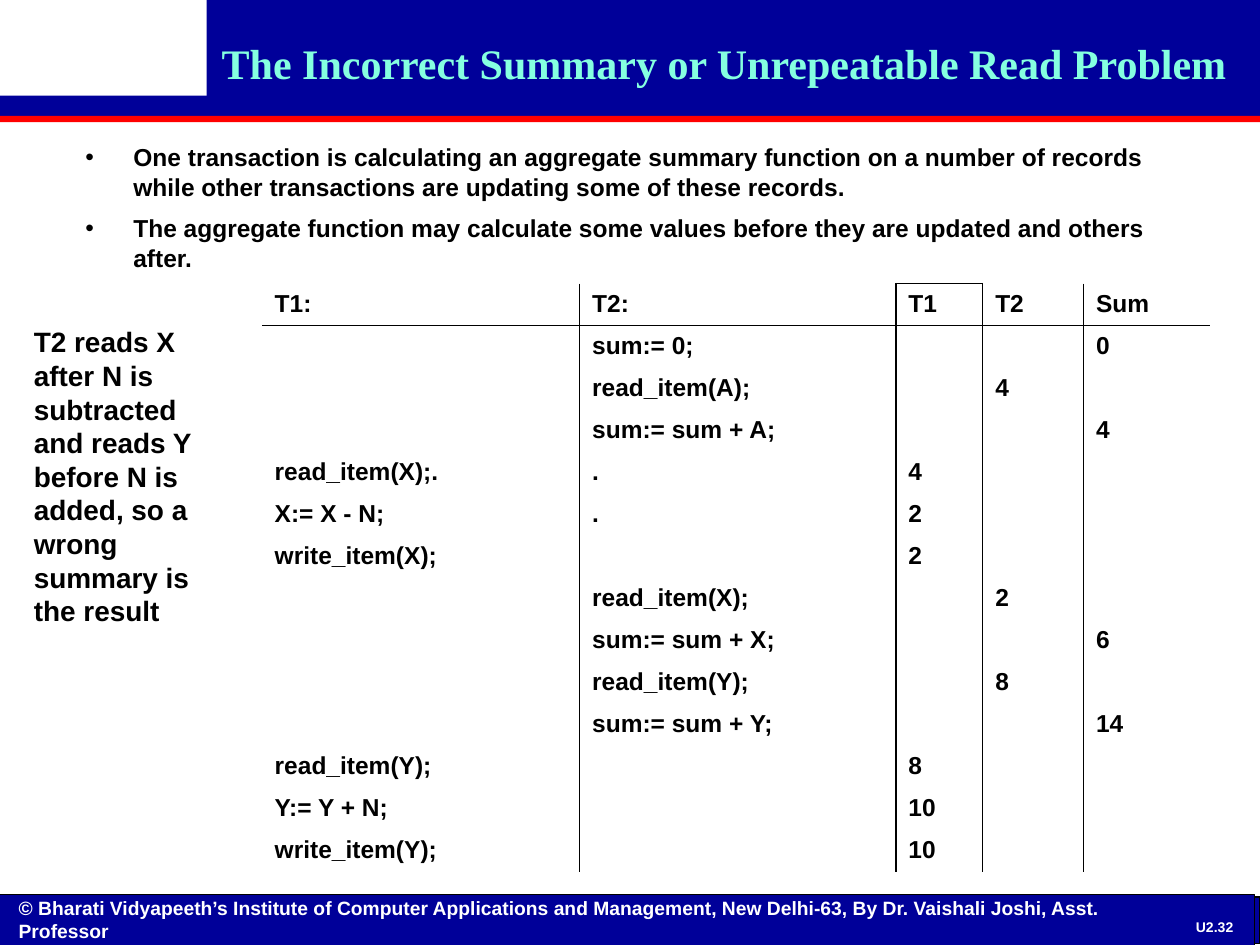
import lxml.etree
import pptx
import pptx.dml.color
import pptx.enum.shapes
import pptx.enum.text
import pptx.oxml.ns
import pptx.util

Inches = pptx.util.Inches
Pt = pptx.util.Pt
RGBColor = pptx.dml.color.RGBColor
Align = pptx.enum.text.PP_ALIGN
Anchor = pptx.enum.text.MSO_ANCHOR
qn = pptx.oxml.ns.qn

NAVY = RGBColor(0x00, 0x00, 0x99)
RED = RGBColor(0xFF, 0x00, 0x00)
AQUA = RGBColor(0x85, 0xFF, 0xE0)
WHITE = RGBColor(0xFF, 0xFF, 0xFF)
BLACK = RGBColor(0x00, 0x00, 0x00)

TITLE = "The Incorrect Summary or Unrepeatable Read Problem"
BULLETS = [
    "One transaction is calculating an aggregate summary function on a number of records "
    "while other transactions are updating some of these records.",
    "The aggregate function may calculate some values before they are updated and others after.",
]
NOTE = ("T2 reads X after N is subtracted and reads Y before N is added, "
        "so a wrong summary is the result")
COPYRIGHT = ("© Bharati Vidyapeeth’s Institute of Computer Applications and Management, "
             "New Delhi-63, By Dr. Vaishali Joshi, Asst. Professor")
COLUMN_WIDTHS = [2.52, 2.51, 0.69, 0.8, 1]
SCHEDULE = [
    ["T1:", "T2:", "T1", "T2", "Sum"],
    ["", "sum:= 0;", "", "", "0"],
    ["", "read_item(A);", "", "4", ""],
    ["", "sum:= sum + A;", "", "", "4"],
    ["read_item(X);.", ".", "4", "", ""],
    ["X:= X - N;", ".", "2", "", ""],
    ["write_item(X);", "", "2", "", ""],
    ["", "read_item(X);", "", "2", ""],
    ["", "sum:= sum + X;", "", "", "6"],
    ["", "read_item(Y);", "", "8", ""],
    ["", "sum:= sum + Y;", "", "", "14"],
    ["read_item(Y);", "", "8", "", ""],
    ["Y:= Y + N;", "", "10", "", ""],
    ["write_item(Y);", "", "10", "", ""],
]


def format_font(font, size, color=BLACK, name="Arial"):
    """Apply the bold face used throughout the slide."""
    for attribute, value in {"name": name, "size": Pt(size), "bold": True}.items():
        setattr(font, attribute, value)
    font.color.rgb = color


def add_band(slide, left, top, width, height, color, outlined=False):
    """Add a filled band, with a thin black outline if asked."""
    shape = slide.shapes.add_shape(
        pptx.enum.shapes.MSO_SHAPE.RECTANGLE,
        Inches(left), Inches(top), Inches(width), Inches(height))
    shape.shadow.inherit = False
    shape.fill.solid()
    shape.fill.fore_color.rgb = color
    if outlined:
        shape.line.color.rgb = BLACK
        shape.line.width = Pt(0.75)
    else:
        shape.line.fill.background()


def add_text(slide, left, top, width, height, text, size, color=BLACK, **frame_format):
    """Add a wrapped single-paragraph text box and return its text frame."""
    box = slide.shapes.add_textbox(Inches(left), Inches(top), Inches(width), Inches(height))
    frame = box.text_frame
    for attribute, value in {"word_wrap": True, **frame_format}.items():
        setattr(frame, attribute, value)
    frame.text = text
    format_font(frame.paragraphs[0].font, size, color)
    return frame


def add_header(slide, left, top, width):
    """Draw the header bands and put the title over them."""
    add_band(slide, left + 1.64, top, width - 1.64, 0.8, NAVY)
    add_band(slide, left, top + 0.76, width, 0.16, NAVY)
    add_band(slide, left, top + 0.92, width, 0.05, RED)
    title = slide.shapes.title
    title.element.getparent().append(title.element)
    placement = {"left": left + 1.66, "top": top + 0.25, "width": width - 1.7, "height": 0.32}
    for attribute, value in placement.items():
        setattr(title, attribute, Inches(value))
    frame = title.text_frame
    frame_format = {"auto_size": pptx.enum.text.MSO_AUTO_SIZE.NONE,
                    "vertical_anchor": Anchor.TOP, "word_wrap": True}
    for attribute, value in frame_format.items():
        setattr(frame, attribute, value)
    frame.text = TITLE
    paragraph = frame.paragraphs[0]
    paragraph.alignment = Align.LEFT
    format_font(paragraph.font, 24, AQUA, "Times New Roman")


def add_bullets(slide, left, top, width, height):
    """Write the bulleted explanation with hanging indents."""
    frame = add_text(slide, left, top, width, height, "\n".join(BULLETS), 14)
    for index, paragraph in enumerate(frame.paragraphs):
        properties = paragraph._p.get_or_add_pPr()
        properties.set("marL", str(Inches(0.38)))
        properties.set("indent", str(-Inches(0.38)))
        lxml.etree.SubElement(properties, qn("a:buFont"), typeface="Arial")
        lxml.etree.SubElement(properties, qn("a:buChar"), char="•")
        if index:
            paragraph.space_before = Pt(7)
        format_font(paragraph.font, 14)


def set_borders(cell, visible_sides):
    """Draw the named sides of a cell in black and hide the others."""
    properties = cell._tc.get_or_add_tcPr()
    for side in "LRTB":
        line = lxml.etree.SubElement(properties, qn(f"a:ln{side}"), w=str(Pt(1)))
        if side in visible_sides:
            fill = lxml.etree.SubElement(line, qn("a:solidFill"))
            lxml.etree.SubElement(fill, qn("a:srgbClr"), val=str(BLACK))
        else:
            lxml.etree.SubElement(line, qn("a:noFill"))


def border_sides(row, column):
    """Return the ruled sides of a schedule cell."""
    sides = ""
    if column > 0:
        sides += "L"
    if column < len(COLUMN_WIDTHS) - 1:
        sides += "R"
    if row == 1 or (row, column) == (0, 2):
        sides += "T"
    if row == 0:
        sides += "B"
    return sides


def add_schedule(slide, left, top, width, height):
    """Build the table of interleaved transaction steps."""
    table = slide.shapes.add_table(
        len(SCHEDULE), len(COLUMN_WIDTHS),
        Inches(left), Inches(top), Inches(width), Inches(height)).table
    table.first_row = table.horz_banding = False
    for column, column_width in zip(table.columns, COLUMN_WIDTHS):
        column.width = Inches(column_width)
    for row_index, values in enumerate(SCHEDULE):
        table.rows[row_index].height = Inches(height / len(SCHEDULE))
        for column_index, text in enumerate(values):
            cell = table.cell(row_index, column_index)
            cell.text = text
            format_font(cell.text_frame.paragraphs[0].font, 14)
            set_borders(cell, border_sides(row_index, column_index))
            cell.fill.background()


def add_footer(slide, left, top, width):
    """Draw the footer bands with the copyright line and page number."""
    add_band(slide, left, top + 0.02, width, 0.37, NAVY, True)
    add_band(slide, left - 0.04, top, width, 0.43, NAVY, True)
    add_text(slide, left + 0.05, top, 9.3, 0.4, COPYRIGHT, 11, WHITE,
             margin_top=0, margin_bottom=0, vertical_anchor=Anchor.MIDDLE)
    number = add_text(slide, left + 9.38, top + 0.16, 0.52, 0.2, "U2.32", 8, WHITE,
                      word_wrap=False, margin_top=0, margin_bottom=0,
                      vertical_anchor=Anchor.MIDDLE)
    number.paragraphs[0].alignment = Align.CENTER


def main():
    """Build and save the slide."""
    presentation = pptx.Presentation()
    presentation.slide_width = Inches(10)
    presentation.slide_height = Inches(7.5)
    slide = presentation.slides.add_slide(presentation.slide_layouts[5])
    add_header(slide, 0, 0, 10)
    add_footer(slide, 0, 7.1, 10)
    add_bullets(slide, 0.58, 1.08, 9.08, 0.94)
    add_text(slide, 0.17, 2.53, 1.71, 2.52, NOTE, 16)
    add_schedule(slide, 2.08, 2.25, sum(COLUMN_WIDTHS), 4.67)
    presentation.save("out.pptx")


if __name__ == "__main__":
    main()
